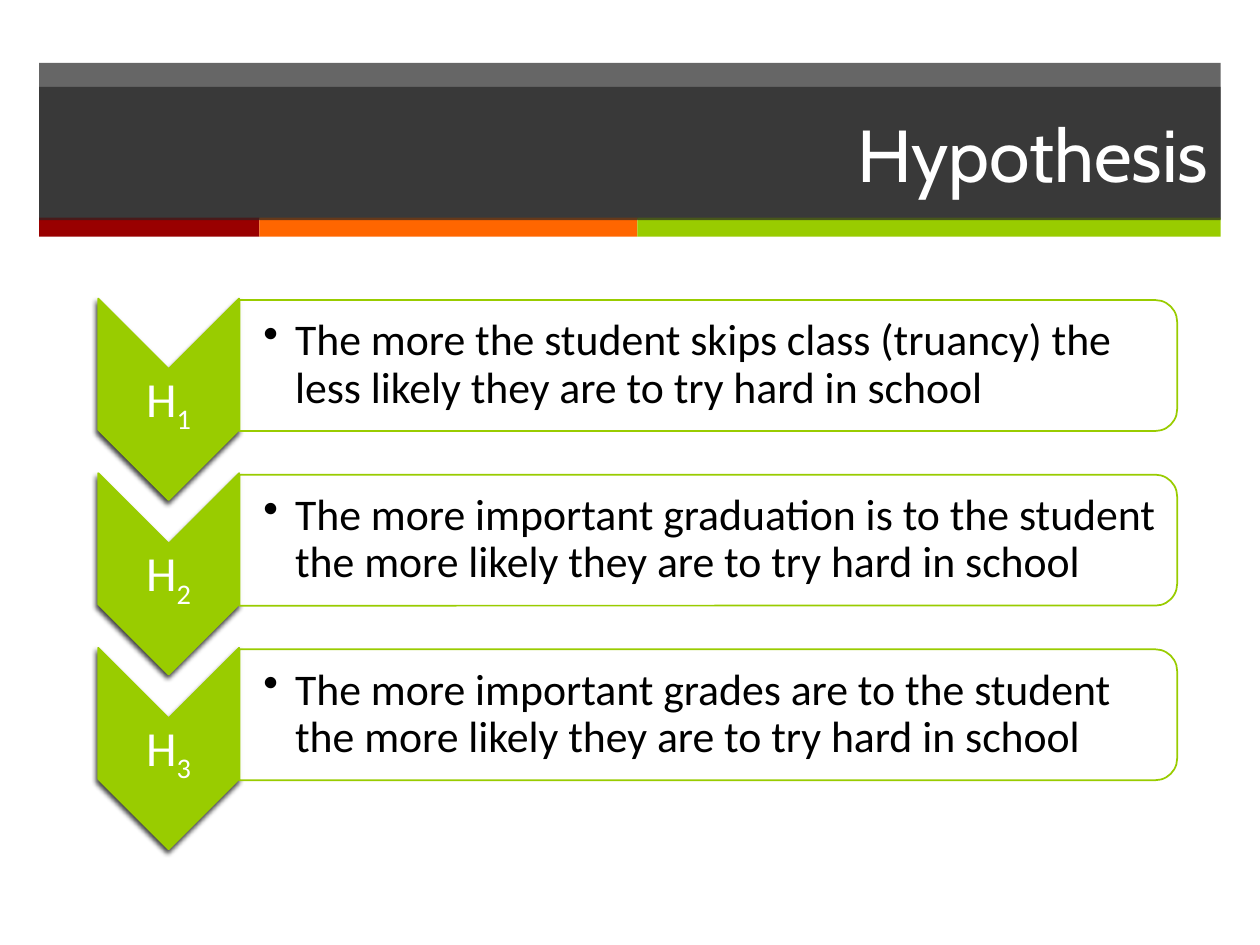
import pptx
import pptx.dml.color
import pptx.enum.shapes
import pptx.enum.text
import pptx.oxml.ns
import pptx.util
from lxml import etree

Cm = pptx.util.Cm
Pt = pptx.util.Pt
RGBColor = pptx.dml.color.RGBColor
MSO_SHAPE = pptx.enum.shapes.MSO_SHAPE
PP_ALIGN = pptx.enum.text.PP_ALIGN
MSO_ANCHOR = pptx.enum.text.MSO_ANCHOR
qn = pptx.oxml.ns.qn

CHARCOAL = RGBColor(0x26, 0x26, 0x26)
RED = RGBColor(0x99, 0x00, 0x00)
ORANGE = RGBColor(0xFF, 0x66, 0x00)
GREEN = RGBColor(0x99, 0xCC, 0x00)
WHITE = RGBColor(0xFF, 0xFF, 0xFF)
BLACK = RGBColor(0x00, 0x00, 0x00)

BAND_LEFT, BAND_WIDTH = 0.79, 23.82
STRIPES = [(RED, 4.44), (ORANGE, 7.62), (GREEN, 11.76)]

HYPOTHESES = [
    "The more the student skips class (truancy) the less likely they are to try hard in school",
    "The more important graduation is to the student the more likely they are to try hard in school",
    "The more important grades are to the student the more likely they are to try hard in school",
]
FIRST_ROW_TOP, ROW_PITCH = 6.02, 3.52


def set_alpha(shape, percent):
    color = shape._element.spPr.find(qn("a:solidFill")).find(qn("a:srgbClr"))
    etree.SubElement(color, qn("a:alpha"), val=str(percent * 1000))


def add_block(slide, preset, left, top, width, height, fill, alpha=None, line=None):
    block = slide.shapes.add_shape(preset, Cm(left), Cm(top), Cm(width), Cm(height))
    block.shadow.inherit = False
    block.fill.solid()
    block.fill.fore_color.rgb = fill
    if alpha:
        set_alpha(block, alpha)
    if line:
        block.line.color.rgb = line
        block.line.width = Pt(1)
    else:
        block.line.fill.background()
    return block


def add_turned_block(slide, preset, left, top, width, height, **style):
    """Turn a preset by 90 degrees so that it covers the given area."""
    shift = (width - height) / 2
    block = add_block(slide, preset, left + shift, top - shift, height, width,
                      line=GREEN, **style)
    block.rotation = 90
    return block


def add_drop_shadow(shape):
    effects = shape._element.spPr.find(qn("a:effectLst"))
    shadow = etree.SubElement(effects, qn("a:outerShdw"), blurRad=str(Pt(3)),
                              dist=str(Pt(2)), dir=str(110 * 60000), rotWithShape="0")
    color = etree.SubElement(shadow, qn("a:srgbClr"), val=str(BLACK))
    etree.SubElement(color, qn("a:alpha"), val="75000")


def add_text(slide, left, top, width, height, left_inset=0.05):
    box = slide.shapes.add_textbox(Cm(left), Cm(top), Cm(width), Cm(height))
    frame = box.text_frame
    frame.word_wrap = True
    frame.vertical_anchor = MSO_ANCHOR.MIDDLE
    frame.margin_left = Cm(left_inset)
    frame.margin_top = frame.margin_right = frame.margin_bottom = Cm(0.05)
    paragraph = frame.paragraphs[0]
    paragraph.line_spacing = 0.9
    return paragraph


def set_font(paragraph, name, size, color):
    paragraph.font.name = name
    paragraph.font.size = Pt(size)
    paragraph.font.color.rgb = color


def add_bullet(paragraph):
    properties = paragraph._p.get_or_add_pPr()
    properties.set("marL", str(Cm(0.64)))
    properties.set("indent", str(-Cm(0.64)))
    etree.SubElement(properties, qn("a:buChar"), char="•")


def add_header(slide):
    add_block(slide, MSO_SHAPE.RECTANGLE, BAND_LEFT, 1.27, BAND_WIDTH, 3.15, CHARCOAL, alpha=70)

    # Coloured stripes under the band
    left = BAND_LEFT
    for color, width in STRIPES:
        add_block(slide, MSO_SHAPE.RECTANGLE, left, 4.39, width, 0.38, color)
        left += width

    # Title
    title = add_block(slide, MSO_SHAPE.RECTANGLE, BAND_LEFT, 1.75, BAND_WIDTH, 2.69,
                      CHARCOAL, alpha=70)
    title.text_frame.vertical_anchor = MSO_ANCHOR.MIDDLE
    heading = title.text_frame.paragraphs[0]
    heading.text = "Hypothesis"
    heading.alignment = PP_ALIGN.RIGHT
    set_font(heading, "Cabin", 42, WHITE)


def add_hypothesis(slide, number, statement, top):
    # Chevron with its numbered label
    chevron = add_turned_block(slide, MSO_SHAPE.CHEVRON, 1.98, top, 2.84, 4.06, fill=GREEN)
    add_drop_shadow(chevron)
    label = add_text(slide, 1.98, top + 1.42, 2.84, 1.22)
    label.alignment = PP_ALIGN.CENTER
    label.add_run().text = "H"
    subscript = label.add_run()
    subscript.text = str(number)
    subscript.font._element.set("baseline", "-25000")
    set_font(label, "Calibri", 28, WHITE)

    # Statement in its rounded frame
    add_turned_block(slide, MSO_SHAPE.ROUND_2_SAME_RECTANGLE, 4.83, top + 0.03, 18.9, 2.64,
                     fill=WHITE, alpha=90)
    body = add_text(slide, 4.83, top + 0.15, 18.77, 2.39, left_inset=0.48)
    body.text = statement
    add_bullet(body)
    set_font(body, "Calibri", 25, BLACK)


def main():
    presentation = pptx.Presentation()
    presentation.slide_width = Cm(25.4)
    presentation.slide_height = Cm(19.05)
    slide = presentation.slides.add_slide(presentation.slide_layouts[6])

    add_header(slide)
    for row, statement in enumerate(HYPOTHESES):
        add_hypothesis(slide, row + 1, statement, FIRST_ROW_TOP + row * ROW_PITCH)

    presentation.save("out.pptx")


if __name__ == "__main__":
    main()
